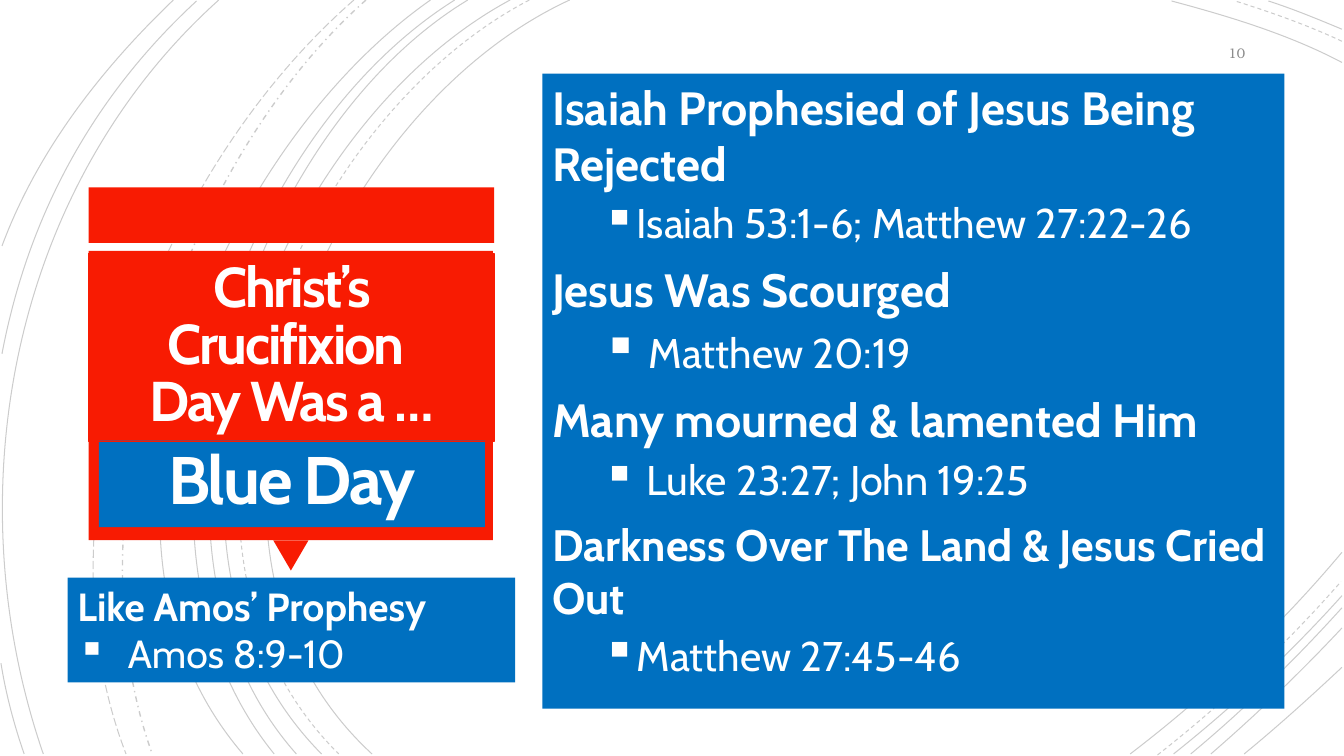
from lxml import etree
from pptx import Presentation
from pptx.dml.color import RGBColor
from pptx.enum import dml, shapes, text
from pptx.oxml import ns
from pptx.util import Inches, Pt

COLORS = {
    "red": "F81B02",
    "blue": "0070C0",
    "white": "FFFFFF",
    "gray": "8C8C8C",
    "black": "000000",
}
SOLID, DASH = dml.MSO_LINE.SOLID, dml.MSO_LINE.DASH
LONG_DASH, DASH_DOT = dml.MSO_LINE.LONG_DASH, dml.MSO_LINE.DASH_DOT

ARCS = [
    (SOLID, (5.65, 0), (3.15, 1.15), (1.43, 5.4), (3.69, 7.48)),
    (SOLID, (13.31, 0.62), (12.78, 0.34), (12.18, 0.16), (11.62, 0.01)),
    (SOLID, (11.21, 7.48), (11.97, 6.9), (12.69, 6.22), (13.31, 5.48)),
    (DASH, (5.25, 0), (2.85, 1.25), (1.23, 5.37), (3.36, 7.48)),
    (DASH, (13.31, 0.41), (12.97, 0.25), (12.6, 0.12), (12.25, 0.01)),
    (DASH, (11.48, 7.49), (12.13, 6.98), (12.75, 6.4), (13.3, 5.77)),
    (SOLID, (5.06, 0), (2.7, 1.27), (1.1, 5.37), (3.19, 7.48)),
    (SOLID, (13.31, 0.29), (13.07, 0.19), (12.83, 0.09), (12.58, 0.01)),
    (SOLID, (11.64, 7.48), (12.23, 7.01), (12.8, 6.48), (13.31, 5.91)),
    (SOLID, (4.64, 0), (2.44, 1.33), (1.1, 5.41), (2.94, 7.48)),
    (SOLID, (11.81, 7.48), (12.34, 7.04), (12.84, 6.55), (13.31, 6.03)),
    (SOLID, (4.51, 0), (2.31, 1.38), (0.97, 5.33), (2.72, 7.48)),
    (SOLID, (12.01, 7.48), (12.46, 7.09), (12.9, 6.67), (13.31, 6.23)),
    (SOLID, (4.27, 0), (2.17, 1.47), (0.53, 5.29), (2.41, 7.48)),
    (SOLID, (12.34, 7.48), (12.67, 7.21), (12.99, 6.92), (13.31, 6.62)),
    (DASH_DOT, (3.63, 0), (1.76, 1.66), (0.65, 5.09), (1.51, 7.48)),
    (LONG_DASH, (3.51, 0), (1.57, 1.69), (0.29, 4.99), (1.25, 7.48)),
    (SOLID, (2.17, 0), (0.11, 1.85), (-0.46, 4.9), (0.43, 7.48)),
    (SOLID, (1.95, 0.01), (0.92, 0.96), (0.28, 2.14), (0.02, 3.51)),
    (SOLID, (0.01, 6.58), (0.06, 6.89), (0.14, 7.19), (0.24, 7.48)),
    (SOLID, (1.72, 0), (1, 0.69), (0.37, 1.5), (0.02, 2.44)),
]

PROPHECIES = [
    ("Isaiah Prophesied of Jesus Being Rejected", 33.3, "Isaiah 53:1-6; Matthew 27:22-26", None),
    ("Jesus Was Scourged", 33.3, "Matthew 20:19", 31.4),
    ("Many mourned & lamented Him", 33.3, " Luke 23:27; John 19:25", None),
    ("Darkness Over The Land & Jesus Cried Out", 31.4, "Matthew 27:45-46", None),
]


def rgb(name):
    """Return the named colour."""
    return RGBColor.from_string(COLORS[name])


def add_block(slide, left, top, width, height, fill=None, kind=shapes.MSO_SHAPE.RECTANGLE):
    """Add a preset shape without outline or shadow."""
    shape = slide.shapes.add_shape(kind, Inches(left), Inches(top), Inches(width), Inches(height))
    shape.shadow.inherit = False
    shape.line.fill.background()
    if fill:
        shape.fill.solid()
        shape.fill.fore_color.rgb = rgb(fill)
    else:
        shape.fill.background()
    return shape


def set_frame(shape, inset=None, anchor=text.MSO_ANCHOR.TOP, fit=text.MSO_AUTO_SIZE.NONE):
    """Prepare the text frame of a shape and return it."""
    frame = shape.text_frame
    frame.word_wrap = True
    frame.auto_size = fit
    frame.vertical_anchor = anchor
    if inset is not None:
        frame.margin_left = frame.margin_right = Inches(inset)
        frame.margin_top = frame.margin_bottom = Inches(inset)
    return frame


def add_text(frame, content, size, bold=False, color="white", font="Cabin",
             align=text.PP_ALIGN.LEFT, before=0, line_spacing=None, tracking=None,
             bullet_indent=None, hanging=0, bullet_size=100, lead_size=None):
    """Write one formatted paragraph, led by a bold space if lead_size is given."""
    paragraph = frame.paragraphs[0]
    if paragraph.runs:
        paragraph = frame.add_paragraph()
    paragraph.alignment = align
    paragraph.space_before = Pt(before)
    if line_spacing:
        paragraph.line_spacing = line_spacing
    pieces = [(content, size, bold)]
    if lead_size:
        pieces.insert(0, (" ", lead_size, True))
    for piece, piece_size, piece_bold in pieces:
        run = paragraph.add_run()
        run.text = piece
        run.font.size, run.font.bold, run.font.name = Pt(piece_size), piece_bold, font
        run.font.color.rgb = rgb(color)
        if tracking:
            run.font._element.set("spc", str(int(tracking * 100)))
    if bullet_indent:
        properties = paragraph._p.get_or_add_pPr()
        properties.set("marL", str(Inches(bullet_indent)))
        properties.set("indent", str(-Inches(hanging)))
        etree.SubElement(properties, ns.qn("a:buSzPct"), val=str(bullet_size * 1000))
        etree.SubElement(properties, ns.qn("a:buFont"), typeface="OpenSymbol")
        etree.SubElement(properties, ns.qn("a:buChar"), char="▪")


def add_arc(slide, dash, start, *controls):
    """Draw one faint background arc as a cubic curve."""
    builder = slide.shapes.build_freeform(*map(Inches, start))
    builder.add_line_segments([tuple(map(Inches, point)) for point in controls], close=False)
    arc = builder.convert_to_shape()
    segments = list(arc.element.iter(ns.qn("a:lnTo")))
    curve = etree.SubElement(segments[0].getparent(), ns.qn("a:cubicBezTo"))
    for segment in segments:
        curve.append(segment[0])
        segment.getparent().remove(segment)
    arc.shadow.inherit = False
    arc.fill.background()
    arc.line.width = Pt(1 if dash == DASH_DOT else 0.75)
    arc.line.color.rgb = rgb("black")
    arc.line.dash_style = dash
    color = arc.line._ln.find(".//" + ns.qn("a:srgbClr"))
    etree.SubElement(color, ns.qn("a:alpha"), val="20000")


def add_title_panel(slide, left, top, width):
    """Build the red panel with its strip, pointer, heading and blue title."""
    add_block(slide, left, top, width, 0.55, "red")
    pointer = add_block(slide, left + width / 2 - 0.18, top + 3.5, 0.35, 0.3, "red",
                        shapes.MSO_SHAPE.ISOSCELES_TRIANGLE)
    pointer.rotation = 180
    add_block(slide, left, top + 0.63, width - 0.01, 2.87, "red")
    style = dict(bold=True, align=text.PP_ALIGN.CENTER, line_spacing=0.85, tracking=-1.5)

    title = slide.shapes.title
    title.left, title.top = Inches(left + 0.1), Inches(top + 2.51)
    title.width, title.height = Inches(width - 0.19), Inches(0.86)
    title.fill.solid()
    title.fill.fore_color.rgb = rgb("blue")
    add_text(set_frame(title, 0.25, text.MSO_ANCHOR.MIDDLE), "Blue Day", 48, **style)
    title.element.getparent().append(title.element)

    heading = add_block(slide, left, top + 0.66, width, 1.86)
    heading.line.color.rgb = rgb("red")
    heading.line.width = Pt(0.75)
    frame = set_frame(heading, 0.25, text.MSO_ANCHOR.MIDDLE)
    for line in ("Christ’s Crucifixion ", "Day Was a …"):
        add_text(frame, line, 40, **style)


def add_prophecies(slide, left, top, width, height):
    """Build the blue panel of prophecies and their references."""
    frame = set_frame(add_block(slide, left, top, width, height, "blue"))
    for prophecy, size, reference, lead_size in PROPHECIES:
        add_text(frame, prophecy, size, bold=True, before=10)
        add_text(frame, reference, 29.6, before=5, bullet_indent=0.75, hanging=0.25,
                 bullet_size=110, lead_size=lead_size)


def add_amos_note(slide, left, top, width, height):
    """Build the blue note on Amos below the title panel."""
    frame = set_frame(add_block(slide, left, top, width, height, "blue"),
                      fit=text.MSO_AUTO_SIZE.SHAPE_TO_FIT_TEXT)
    add_text(frame, "Like Amos’ Prophesy", 28, bold=True)
    add_text(frame, "Amos 8:9-10", 28, bullet_indent=0.5, hanging=0.5)


def add_page_number(slide, left, top, width, height):
    """Write the page number at the top right."""
    box = slide.shapes.add_textbox(Inches(left), Inches(top), Inches(width), Inches(height))
    add_text(set_frame(box, anchor=text.MSO_ANCHOR.MIDDLE), "10", 10, color="gray",
             font="TeX Gyre Bonum", align=text.PP_ALIGN.RIGHT)


def main():
    """Build and save the presentation."""
    presentation = Presentation()
    presentation.slide_width, presentation.slide_height = Inches(13.33), Inches(7.5)
    slide = presentation.slides.add_slide(presentation.slide_layouts[5])
    for arc in ARCS:
        add_arc(slide, *arc)
    add_title_panel(slide, 0.88, 1.86, 4.02)
    add_prophecies(slide, 5.38, 0.73, 7.36, 6.3)
    add_amos_note(slide, 0.67, 5.73, 4.44, 1.04)
    add_page_number(slide, 11.45, 0.35, 1, 0.35)
    presentation.save("out.pptx")


if __name__ == "__main__":
    main()
